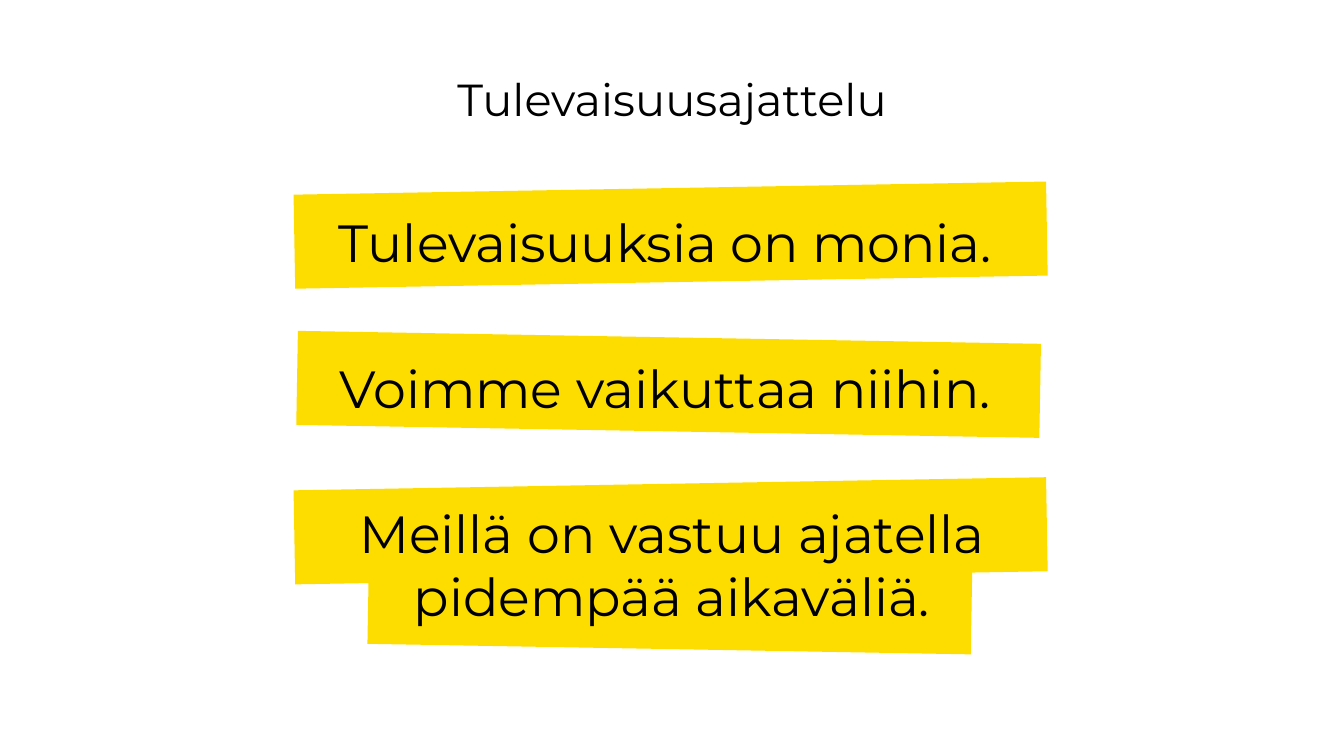
from lxml.etree import SubElement
from pptx import Presentation
from pptx.dml.color import RGBColor
from pptx.enum.shapes import MSO_SHAPE
from pptx.enum.text import MSO_ANCHOR, MSO_AUTO_SIZE, PP_ALIGN
from pptx.oxml.ns import qn
from pptx.util import Inches, Pt

COLORS = {"band": "FDDD00", "text": "000000"}
COLUMNS, ROWS = 100, 56.25
BAND_HEIGHT = 7
# left, top and width in grid units, then rotation in degrees
BANDS = [
    (27.4, 41.3, 44.9, 1),
    (21.9, 36, 56, 359),
    (22.1, 25.1, 55.3, 1),
    (21.9, 14, 56, 359),
]
STATEMENTS = [
    "Tulevaisuuksia on monia. ",
    "Voimme vaikuttaa niihin. ",
    "Meillä on vastuu ajatella pidempää aikaväliä.",
]


class SlideBuilder:
    frame_format = {
        "margin_left": 0, "margin_right": 0, "margin_top": 0, "margin_bottom": 0,
        "vertical_anchor": MSO_ANCHOR.MIDDLE, "word_wrap": True,
    }
    font_name = "Montserrat"

    def __init__(self, presentation):
        self.slide = presentation.slides.add_slide(presentation.slide_layouts[1])
        self.column = presentation.slide_width / COLUMNS
        self.row = presentation.slide_height / ROWS

    def place(self, left, top, width, height):
        """Turn grid units into slide lengths."""
        return (round(left * self.column), round(top * self.row),
                round(width * self.column), round(height * self.row))

    def band(self, left, top, width, rotation):
        shape = self.slide.shapes.add_shape(
            MSO_SHAPE.RECTANGLE, *self.place(left, top, width, BAND_HEIGHT))
        shape.rotation = rotation
        shape.shadow.inherit = False
        shape.fill.solid()
        shape.fill.fore_color.rgb = RGBColor.from_string(COLORS["band"])
        shape.line.fill.background()

    def fill_placeholder(self, index, box, lines, size, auto_size, gap=0):
        """Place, fill and format a placeholder, and bring it to the front."""
        shape = self.slide.placeholders[index]
        shape.left, shape.top, shape.width, shape.height = self.place(*box)
        shape.element.getparent().append(shape.element)
        frame = shape.text_frame
        for name, value in {**self.frame_format, "auto_size": auto_size}.items():
            setattr(frame, name, value)
        frame.text = "\n".join(lines)
        for number, paragraph in enumerate(frame.paragraphs):
            paragraph.alignment = PP_ALIGN.CENTER
            paragraph.space_before = Pt(gap if number else 0)
            properties = paragraph._p.get_or_add_pPr()
            properties.set("marL", "0")
            properties.set("indent", "0")
            SubElement(properties, qn("a:buNone"))
            font = paragraph.runs[0].font
            for name, value in {"name": self.font_name, "size": Pt(size)}.items():
                setattr(font, name, value)
            font.color.rgb = RGBColor.from_string(COLORS["text"])


def main():
    presentation = Presentation()
    presentation.slide_width = Inches(10)
    presentation.slide_height = presentation.slide_width * 9 // 16
    builder = SlideBuilder(presentation)
    for band in BANDS:
        builder.band(*band)
    builder.fill_placeholder(1, (18.4, 15, 63.2, 32.3), STATEMENTS, 28,
                             MSO_AUTO_SIZE.NONE, gap=44.5)
    builder.fill_placeholder(0, (5.1, 5.3, 89.8, 4), ["Tulevaisuusajattelu"], 24,
                             MSO_AUTO_SIZE.SHAPE_TO_FIT_TEXT)
    presentation.save("out.pptx")


if __name__ == "__main__":
    main()
